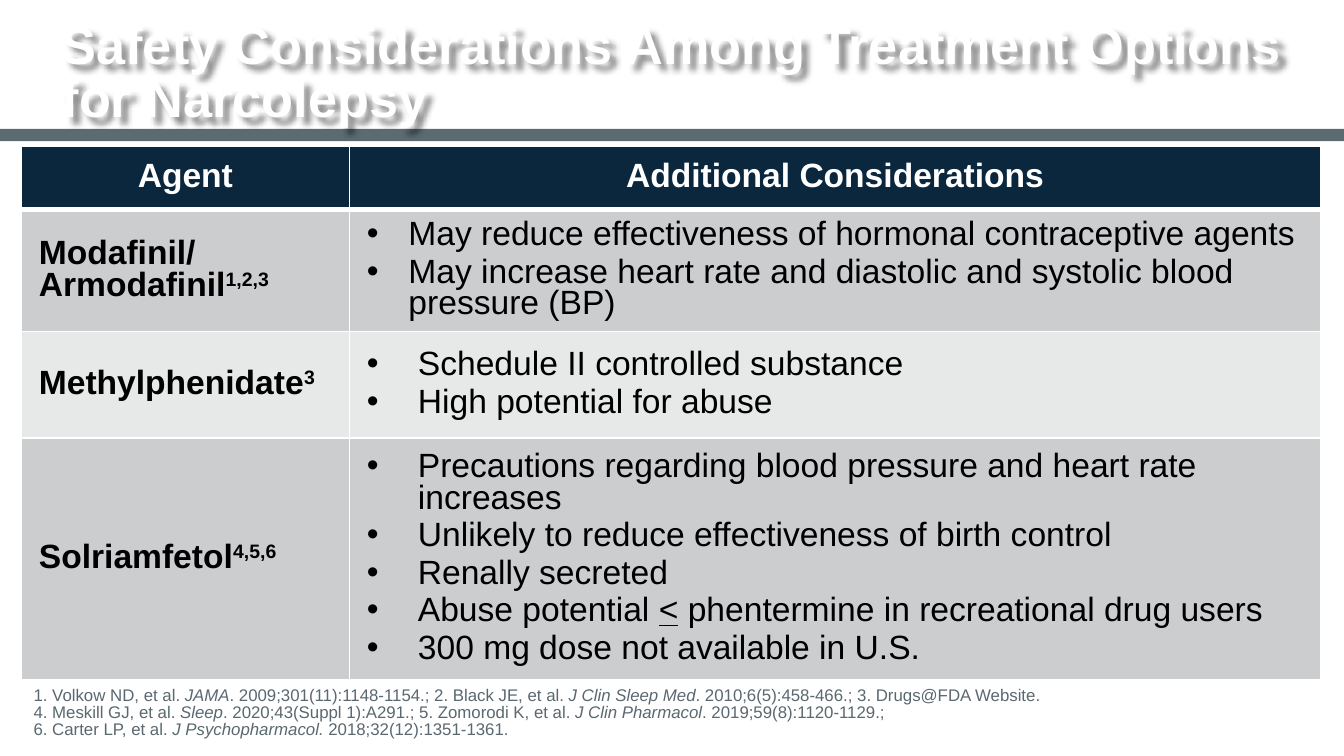
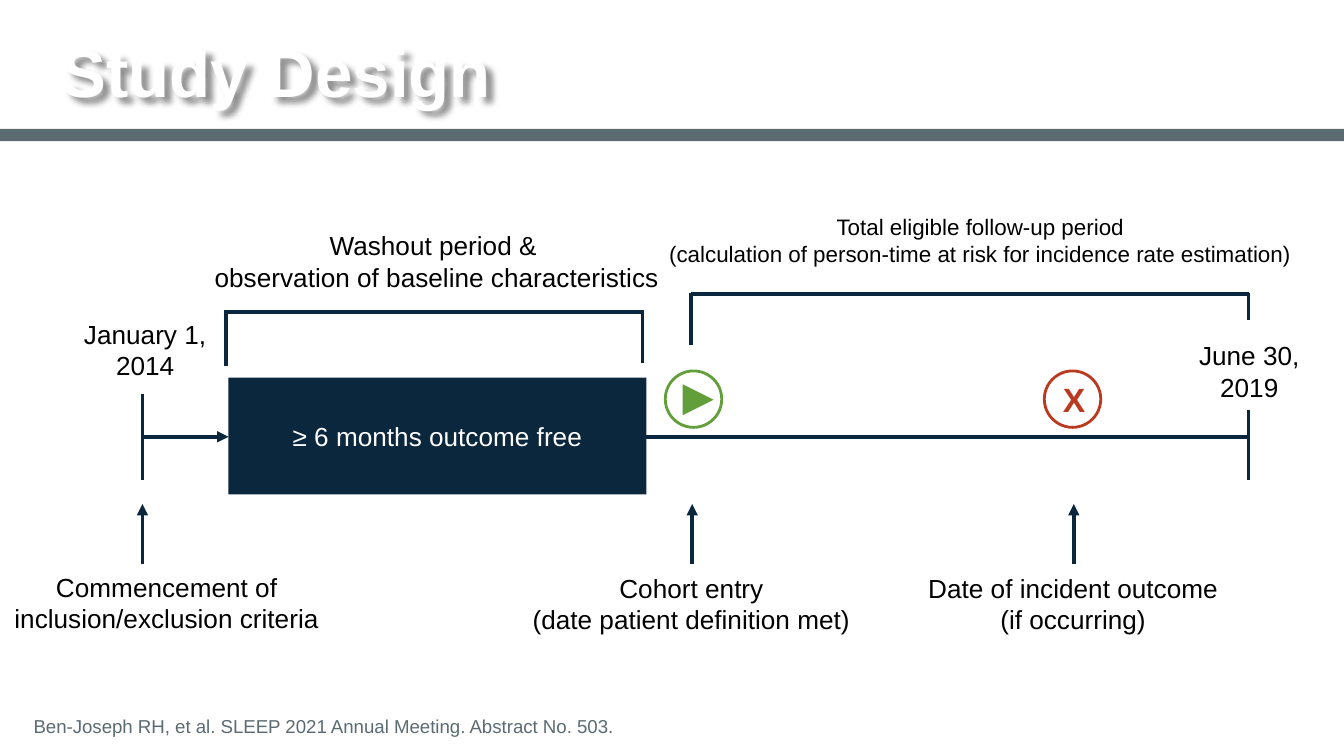
from copy import deepcopy

from lxml import etree
from pptx import Presentation
from pptx import util as u
from pptx.dml.color import RGBColor
from pptx.enum import shapes, text
from pptx.oxml import parse_xml
from pptx.oxml.ns import nsdecls, qn


class Theme:
    font = "Arial"
    navy, slate, note = "0B273E", "5C6B72", "5A686F"
    white, black = "FFFFFF", "000000"
    band_dark, band_light = "CCCDCE", "E7E8E8"
    green, red = "629E3A", "B93A1E"
    table_size, label_size, small_label_size = 18, 14, 12
    tight = 0.85


MIDDLE = text.MSO_ANCHOR.MIDDLE
CENTER = text.PP_ALIGN.CENTER


def write(paragraph, content, size, color, bold=False, align=None, marked=None):
    """Write text; pieces between asterisks take the marked style, \\n breaks a line."""
    for number, piece in enumerate(content.split("*")):
        for index, line in enumerate(piece.split("\n")):
            if index:
                paragraph.add_line_break()
            if not line:
                continue
            run = paragraph.add_run()
            run.text = line
            run.font.name, run.font.size = Theme.font, u.Pt(size)
            run.font.bold = bold
            run.font.color.rgb = RGBColor.from_string(color)
            if number % 2 and marked == "superscript":
                run.font._element.set("baseline", "30000")
            elif number % 2:
                setattr(run.font, marked, True)
    # Line breaks follow the text size
    for line_break in paragraph._p.findall(qn("a:br")):
        line_break.append(deepcopy(paragraph.runs[0].font._element))
    if align is not None:
        paragraph.alignment = align


def add_line(slide, x1, y1, x2, y2, arrow=False):
    line = slide.shapes.add_connector(
        shapes.MSO_CONNECTOR.STRAIGHT, *map(u.Inches, (x1, y1, x2, y2)))
    line.line.color.rgb = RGBColor.from_string(Theme.navy)
    line.line.width = u.Pt(2)
    if arrow:
        etree.SubElement(line.line._get_or_add_ln(), qn("a:tailEnd"), type="triangle")
    etree.SubElement(line._element.spPr, qn("a:effectLst"))


# Widescreen 16:9
presentation = Presentation()
presentation.slide_width = u.Inches(10)
presentation.slide_height = u.Inches(10) * 9 // 16

# Shared frame: band, title with soft shadow, reference note
frames = [
    ("Safety Considerations Among Treatment Options for Narcolepsy", 28, 0.11, 0.9,
     "1. Volkow ND, et al. *JAMA*. 2009;301(11):1148-1154.; "
     "2. Black JE, et al. *J Clin Sleep Med*. 2010;6(5):458-466.; 3. Drugs@FDA Website. \n"
     "4. Meskill GJ, et al. *Sleep*. 2020;43(Suppl 1):A291.; "
     "5. Zomorodi K, et al. *J Clin Pharmacol*. 2019;59(8):1120-1129.; \n"
     "6. Carter LP, et al. *J Psychopharmacol. *2018;32(12):1351-1361.",
     9, Theme.note, 5.11, 0.52),
    ("Study Design", 36, 0.26, 0.62,
     "Ben-Joseph RH, et al. SLEEP 2021 Annual Meeting. Abstract No. 503.",
     10, Theme.slate, 5.35, 0.27),
]
for (title, title_size, title_top, title_height,
     note, note_size, note_color, note_top, note_height) in frames:
    slide = presentation.slides.add_slide(presentation.slide_layouts[6])
    band = slide.shapes.add_shape(
        shapes.MSO_SHAPE.RECTANGLE, 0, u.Inches(0.96), u.Inches(10), u.Inches(0.09))
    band.shadow.inherit = False
    band.fill.solid()
    band.fill.fore_color.rgb = RGBColor.from_string(Theme.slate)
    band.line.fill.background()

    title_box = slide.shapes.add_textbox(
        u.Inches(0.46), u.Inches(title_top), u.Inches(9.09), u.Inches(title_height))
    frame = title_box.text_frame
    frame.word_wrap, frame.vertical_anchor = True, MIDDLE
    frame.margin_left = frame.margin_right = 0
    write(frame.paragraphs[0], title, title_size, Theme.white, bold=True)
    frame.paragraphs[0].line_spacing = Theme.tight
    title_box._element.spPr.append(parse_xml(
        f'<a:effectLst {nsdecls("a")}><a:outerShdw blurRad="38100" dist="50800" dir="2700000" '
        'algn="tl"><a:srgbClr val="000000"><a:alpha val="43000"/></a:srgbClr>'
        '</a:outerShdw></a:effectLst>'))

    note_box = slide.shapes.add_textbox(
        0, u.Inches(note_top), u.Inches(10), u.Inches(note_height))
    frame = note_box.text_frame
    frame.word_wrap, frame.vertical_anchor = True, text.MSO_ANCHOR.BOTTOM
    frame.margin_left, frame.margin_bottom = u.Inches(0.25), u.Inches(0.13)
    frame.margin_right = frame.margin_top = 0
    write(frame.paragraphs[0], note, note_size, note_color, marked="italic")
    frame.paragraphs[0].line_spacing = Theme.tight

safety_slide, design_slide = presentation.slides

# Safety table: agent, considerations, bullet indent, least row height
agents = [
    ("Modafinil/\nArmodafinil*1,2,3*", [
        "May reduce effectiveness of hormonal contraceptive agents",
        "May increase heart rate and diastolic and systolic blood pressure (BP)"], 0.31, 0.49),
    ("Methylphenidate*3*", [
        "Schedule II controlled substance",
        "High potential for abuse"], 0.38, 0.79),
    ("Solriamfetol*4,5,6*", [
        "Precautions regarding blood pressure and heart rate increases",
        "Unlikely to reduce effectiveness of birth control",
        "Renally secreted",
        "Abuse potential *<* phentermine in recreational drug users",
        "300 mg dose not available in U.S."], 0.38, 0.79),
]
rows = [("Agent", ["Additional Considerations"], 0, 0.47)] + agents
table_frame = safety_slide.shapes.add_table(
    len(rows), 2, u.Inches(0.16), u.Inches(1.09), u.Inches(9.68), u.Inches(3.96))
table = table_frame.table
table.horz_banding = False
table.columns[0].width, table.columns[1].width = u.Inches(2.44), u.Inches(7.23)

for row, (agent, considerations, indent, height) in enumerate(rows):
    table.rows[row].height = u.Inches(height)
    header = row == 0
    fill = Theme.navy if header else (Theme.band_light, Theme.band_dark)[row % 2]
    for column, entries in enumerate(([agent], considerations)):
        cell = table.cell(row, column)
        cell.vertical_anchor = MIDDLE
        cell.margin_left = cell.margin_right = u.Inches(0.11 if header else 0.13)
        for side in "LRTB":
            thick = (header and side == "B") or (row == 1 and side == "T")
            cell._tc.get_or_add_tcPr().append(parse_xml(
                f'<a:ln{side} {nsdecls("a")} w="{u.Pt(3 if thick else 1)}"><a:solidFill>'
                f'<a:srgbClr val="{Theme.white}"/></a:solidFill></a:ln{side}>'))
        cell.fill.solid()
        cell.fill.fore_color.rgb = RGBColor.from_string(fill)
        for index, entry in enumerate(entries):
            frame = cell.text_frame
            paragraph = frame.add_paragraph() if index else frame.paragraphs[0]
            paragraph.line_spacing = Theme.tight
            if index:
                paragraph.space_before = u.Pt(3)
            if column and not header:
                properties = paragraph._p.get_or_add_pPr()
                properties.set("marL", str(u.Inches(indent)))
                properties.set("indent", str(-u.Inches(indent)))
                etree.SubElement(properties, qn("a:buFont"), typeface=Theme.font)
                etree.SubElement(properties, qn("a:buChar"), char="•")
            write(paragraph, entry, Theme.table_size,
                  Theme.white if header else Theme.black,
                  bold=header or column == 0, align=CENTER if header else None,
                  marked="underline" if column else "superscript")
table_frame.height = u.Inches(3.96)

# Study timeline: key positions
axis, start, entry, outcome, end = 3.25, 1.06, 5.15, 7.99, 9.29
box_left, box_width = 1.7, 3.11

# Washout box and event markers: kind, place, fill, outline, rotation
markers = [
    (shapes.MSO_SHAPE.RECTANGLE, (box_left, 2.81, box_width, 0.87), Theme.navy, None, 0),
    (shapes.MSO_SHAPE.OVAL, (4.95, 2.76, 0.42, 0.42), None, Theme.green, 0),
    (shapes.MSO_SHAPE.ISOSCELES_TRIANGLE, (5.08, 2.86, 0.23, 0.23), Theme.green, None, 90),
    (shapes.MSO_SHAPE.OVAL, (7.77, 2.76, 0.42, 0.42), None, Theme.red, 0),
]
for kind, place, fill, outline, rotation in markers:
    shape = design_slide.shapes.add_shape(kind, *map(u.Inches, place))
    shape.shadow.inherit = False
    shape.rotation = rotation
    if fill:
        shape.fill.solid()
        shape.fill.fore_color.rgb = RGBColor.from_string(fill)
        shape.line.fill.background()
    else:
        shape.fill.background()
        shape.line.color.rgb = RGBColor.from_string(outline)
        shape.line.width = u.Pt(1.5)
    if kind == shapes.MSO_SHAPE.RECTANGLE:
        shape.text_frame.vertical_anchor = MIDDLE
        write(shape.text_frame.paragraphs[0], "≥ 6 months outcome free",
              Theme.label_size, Theme.white, align=CENTER)

# Time axis with end ticks, and arrows up to the events
add_line(design_slide, start, axis, box_left, axis, arrow=True)
add_line(design_slide, box_left + box_width, axis, end, axis)
add_line(design_slide, start, 2.93, start, 3.57)
add_line(design_slide, end, 3.05, end, 3.57)
for x in (start, entry, outcome):
    add_line(design_slide, x, 4.2, x, 3.75, arrow=True)

# Period brackets: left, right, top, foot of each leg
for left, right, top, left_foot, right_foot in [
        (1.68, 4.78, 2.32, 2.72, 2.7), (5.14, end, 2.19, 2.57, 2.38)]:
    add_line(design_slide, left, top, right, top)
    add_line(design_slide, left, top - 0.01, left, left_foot)
    add_line(design_slide, right, top - 0.01, right, right_foot)

# Labels: paragraphs, place, size
labels = [
    (["January 1,\n2014"], (0.52, 2.32, 1.12, 0.57), Theme.label_size),
    (["Commencement of\ninclusion/exclusion criteria"], (0, 4.2, 2.48, 0.57), Theme.label_size),
    (["Washout period & \nobservation of baseline characteristics"],
     (1.49, 1.66, 3.52, 0.57), Theme.label_size),
    (["Total eligible follow-up period\n"
      "(calculation of person-time at risk for incidence rate estimation)"],
     (4.86, 1.54, 4.87, 0.5), Theme.small_label_size),
    (["Cohort entry\n(date patient definition met)"],
     (3.86, 4.21, 2.57, 0.57), Theme.label_size),
    (["Date of incident outcome", "(if occurring)"],
     (6.8, 4.21, 2.37, 0.57), Theme.label_size),
    (["June 30,\n2019"], (8.82, 2.48, 0.95, 0.57), Theme.label_size),
    (["X"], (7.81, 2.77, 0.37, 0.4), Theme.table_size),
]
for lines, place, size in labels:
    frame = design_slide.shapes.add_textbox(*map(u.Inches, place)).text_frame
    frame.word_wrap = False
    is_cross = lines == ["X"]
    for index, line in enumerate(lines):
        paragraph = frame.add_paragraph() if index else frame.paragraphs[0]
        write(paragraph, line, size, Theme.red if is_cross else Theme.black,
              bold=is_cross, align=None if is_cross else CENTER)

presentation.save("out.pptx")
